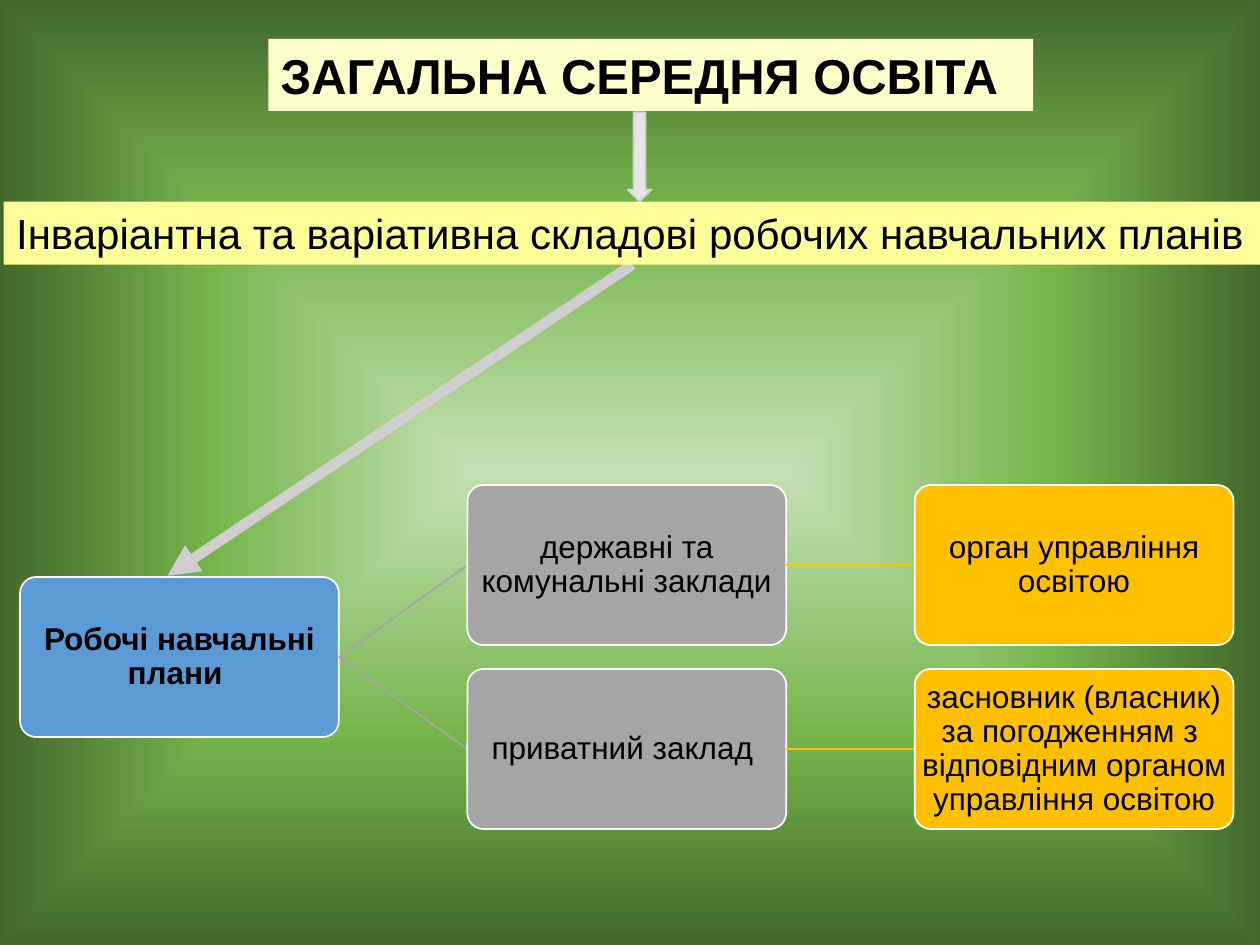
from pptx import Presentation
from pptx.dml.color import RGBColor
from pptx.enum.shapes import MSO_CONNECTOR as CONN, MSO_SHAPE as SHAPE
from pptx.enum.text import MSO_ANCHOR as ANCHOR, MSO_AUTO_SIZE as AUTO, PP_ALIGN as ALIGN
from pptx.oxml import parse_xml
from pptx.oxml.ns import nsdecls, qn
from pptx.util import Inches, Pt

COLORS = {
    "black": "000000", "white": "FFFFFF", "blue": "5B9BD5", "gray": "A5A5A5",
    "gold": "FFC000", "cream": "FFFFCC", "yellow": "FFFF99",
    "pale": "E7E6E6", "silver": "D0CECE",
    "center": "C5E0B4", "middle": "76B54C", "edge": "43682B",
}
NODE_W, NODE_H = 2.53, 1.27
COL_X = [0.16, 3.71, 7.26]
ROW_Y = [3.85, 5.31]
ROOT_Y = sum(ROW_Y) / 2
BRANCHES = [
    ("державні та комунальні заклади", "орган управління освітою"),
    ("приватний заклад ",
     "засновник (власник) за погодженням з \nвідповідним органом управління освітою"),
]


class SlideBuilder:
    """Holds the deck style and the current slide, and draws its elements."""

    def __init__(self, slide, font="Arial"):
        self.s = slide
        self.font = font

    def color(self, name):
        return RGBColor.from_string(COLORS[name])

    def background(self, stops):
        self.s.background.fill.gradient()
        grad = self.s.element.find(".//" + qn("a:gradFill"))
        gs = "".join(f'<a:gs pos="{pos * 1000}"><a:srgbClr val="{COLORS[name]}"/></a:gs>'
                     for pos, name in stops)
        grad.getparent().replace(grad, parse_xml(
            f'<a:gradFill {nsdecls("a")} rotWithShape="1"><a:gsLst>{gs}</a:gsLst>'
            '<a:path path="shape"><a:fillToRect l="50000" t="50000" r="50000" b="50000"/>'
            '</a:path></a:gradFill>'))

    def shape(self, kind, x, y, w, h, fill, line=None):
        sp = self.s.shapes.add_shape(kind, Inches(x), Inches(y), Inches(w), Inches(h))
        sp.shadow.inherit = False
        sp.fill.solid()
        sp.fill.fore_color.rgb = self.color(fill)
        if line:
            sp.line.color.rgb = self.color(line)
            sp.line.width = Pt(1)
        else:
            sp.line.fill.background()
        return sp

    def text(self, sp, text, size, bold=False, align=ALIGN.LEFT):
        tf = sp.text_frame
        tf.word_wrap = True
        tf.vertical_anchor = ANCHOR.MIDDLE
        p = tf.paragraphs[0]
        p.alignment = align
        for i, part in enumerate(text.split("\n")):
            if i:
                p.add_line_break()
            r = p.add_run()
            r.text = part
            r.font.name = self.font
            r.font.size = Pt(size)
            r.font.bold = bold
            r.font.color.rgb = self.color("black")
        return tf

    def banner(self, x, y, w, h, fill, text, size, bold=False):
        sp = self.shape(SHAPE.RECTANGLE, x, y, w, h, fill)
        self.text(sp, text, size, bold).auto_size = AUTO.SHAPE_TO_FIT_TEXT

    def node(self, x, y, fill, text, bold=False):
        sp = self.shape(SHAPE.ROUNDED_RECTANGLE, x, y, NODE_W, NODE_H, fill, "white")
        sp.adjustments[0] = 0.1
        tf = self.text(sp, text, 18, bold, ALIGN.CENTER)
        tf.paragraphs[0].line_spacing = 0.9
        tf.margin_left = tf.margin_right = Inches(0.01)
        tf.margin_top = tf.margin_bottom = Inches(0.01)

    def line(self, x1, y1, x2, y2, color, width=1, arrow=False):
        c = self.s.shapes.add_connector(
            CONN.STRAIGHT, Inches(x1), Inches(y1), Inches(x2), Inches(y2))
        c.line.color.rgb = self.color(color)
        c.line.width = Pt(width)
        if arrow:
            c.line._get_or_add_ln().append(
                parse_xml(f'<a:tailEnd {nsdecls("a")} type="triangle"/>'))
        c._element.spPr.append(parse_xml(f'<a:effectLst {nsdecls("a")}/>'))

    def link(self, col, y1, y2, color):
        self.line(COL_X[col] + NODE_W, y1 + NODE_H / 2,
                  COL_X[col + 1], y2 + NODE_H / 2, color)


def main():
    prs = Presentation()
    prs.slide_width, prs.slide_height = Inches(10), Inches(7.5)
    b = SlideBuilder(prs.slides.add_slide(prs.slide_layouts[6]))
    b.background([(0, "center"), (55, "middle"), (100, "edge")])

    b.node(COL_X[0], ROOT_Y, "blue", "Робочі навчальні плани ", bold=True)
    for y, (school, approver) in zip(ROW_Y, BRANCHES):
        b.link(0, ROOT_Y, y, "gray")
        b.node(COL_X[1], y, "gray", school)
        b.link(1, y, y, "gold")
        b.node(COL_X[2], y, "gold", approver)

    b.banner(2.13, 0.31, 6.07, 0.57, "cream", "ЗАГАЛЬНА СЕРЕДНЯ ОСВІТА", 28, bold=True)
    b.shape(SHAPE.DOWN_ARROW, 4.98, 0.89, 0.19, 0.71, "pale", "silver")
    b.line(5.02, 2.1, 1.33, 4.57, "silver", 6, arrow=True)
    b.banner(0.03, 1.6, 9.97, 0.5, "yellow",
             "Інваріантна та варіативна складові робочих навчальних планів", 24)
    prs.save("out.pptx")


if __name__ == "__main__":
    main()
